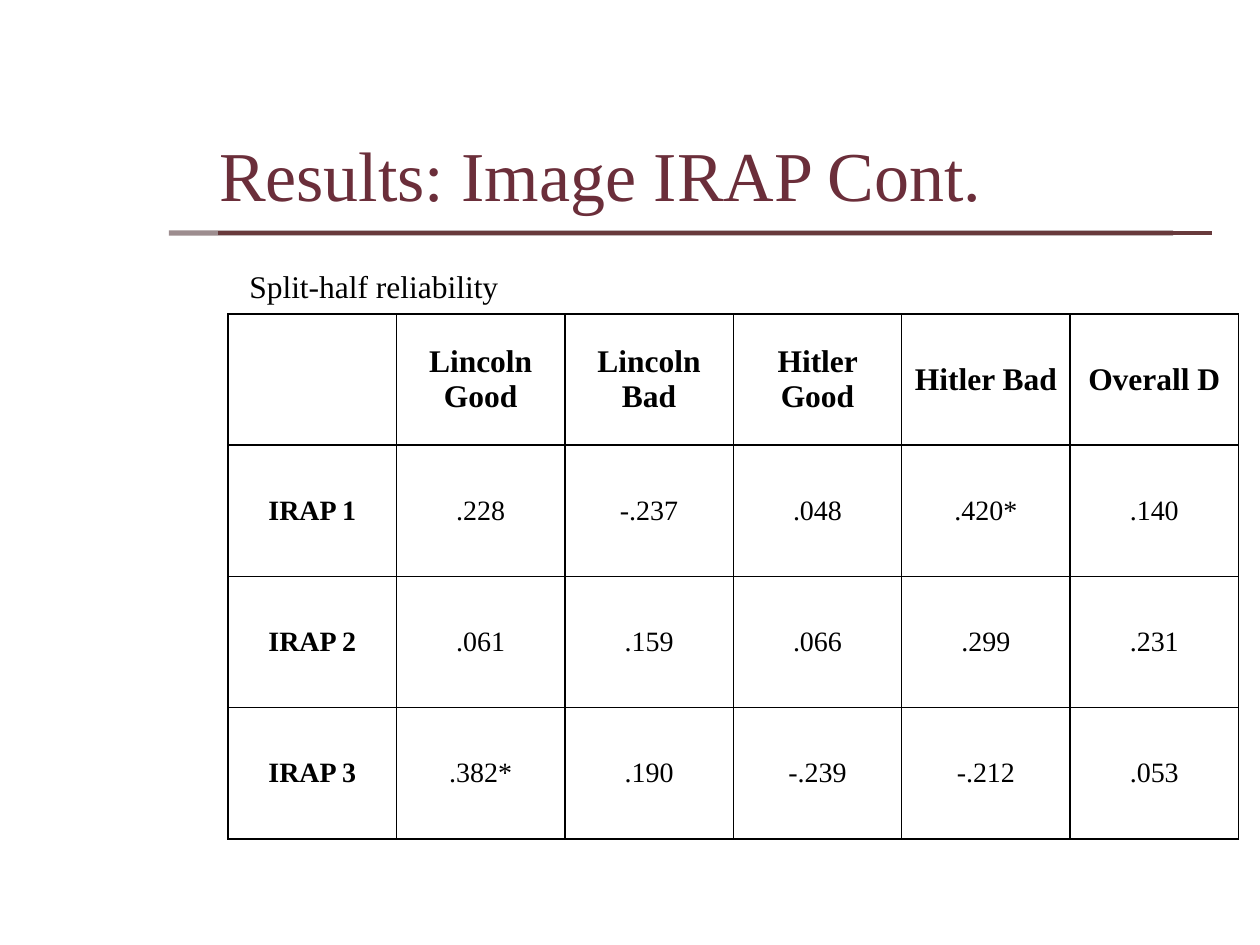
from lxml import etree
from pptx import Presentation, util as u
from pptx.dml.color import RGBColor
from pptx.enum import shapes, text
from pptx.oxml import parse_xml
from pptx.oxml.ns import nsdecls, qn

FONT = "Times New Roman"
BLACK = "000000"
MAROON = "6B2E3A"
RESULTS = [
    ["", "Lincoln Good", "Lincoln Bad", "Hitler Good", "Hitler Bad", "Overall D"],
    ["IRAP 1", ".228", "-.237", ".048", ".420*", ".140"],
    ["IRAP 2", ".061", ".159", ".066", ".299", ".231"],
    ["IRAP 3", ".382*", ".190", "-.239", "-.212", ".053"],
]


def color(value):
    return RGBColor.from_string(value)


def write(frame, wording, size=18, ink=BLACK, bold=False, align=text.PP_ALIGN.LEFT, spacing=None):
    paragraph = frame.paragraphs[0]
    paragraph.alignment = align
    paragraph.line_spacing = spacing
    run = paragraph.add_run()
    run.text = wording
    run.font.name = FONT
    run.font.size = u.Pt(size)
    run.font.bold = bold
    run.font.color.rgb = color(ink)


class SlideBuilder:
    def __init__(self, deck):
        self.slide = deck.slides.add_slide(deck.slide_layouts[6])

    def rule(self, left, right, y, ink, width, opacity=100):
        rule = self.slide.shapes.add_connector(
            shapes.MSO_CONNECTOR.STRAIGHT,
            u.Inches(left), u.Inches(y), u.Inches(right), u.Inches(y))
        rule.line.color.rgb = color(ink)
        rule.line.width = u.Pt(width)
        properties = rule._element.spPr
        etree.SubElement(properties, qn("a:effectLst"))
        if opacity < 100:
            tint = properties.find(".//" + qn("a:srgbClr"))
            etree.SubElement(tint, qn("a:alpha"), val=str(opacity * 1000))

    def textbox(self, left, top, width, height, wording, anchor, bottom=0.05, **style):
        box = self.slide.shapes.add_textbox(
            u.Inches(left), u.Inches(top), u.Inches(width), u.Inches(height))
        frame = box.text_frame
        frame.word_wrap = True
        frame.vertical_anchor = anchor
        frame.margin_bottom = u.Inches(bottom)
        write(frame, wording, spacing=0.9, **style)

    def border(self, cell):
        properties = cell._tc.get_or_add_tcPr()
        for position, side in enumerate(("lnL", "lnR", "lnT", "lnB")):
            properties.insert(position, parse_xml(
                f'<a:{side} {nsdecls("a")} w="{u.Pt(1)}"><a:solidFill>'
                f'<a:srgbClr val="{BLACK}"/></a:solidFill></a:{side}>'))

    def table(self, left, top, width, height, rows):
        grid = self.slide.shapes.add_table(
            len(rows), len(rows[0]), u.Inches(left), u.Inches(top),
            u.Inches(width), u.Inches(height)).table
        for r, row in enumerate(rows):
            for c, wording in enumerate(row):
                cell = grid.cell(r, c)
                cell.fill.background()
                cell.vertical_anchor = text.MSO_ANCHOR.MIDDLE
                self.border(cell)
                if wording:
                    write(cell.text_frame, wording, size=18 if r == 0 else 16,
                          bold=r == 0 or c == 0, align=text.PP_ALIGN.CENTER)


def main():
    deck = Presentation()
    deck.slide_width, deck.slide_height = u.Inches(10), u.Inches(7.5)
    builder = SlideBuilder(deck)
    builder.rule(1.34, 9.31, 1.85, "3C1C21", 3, opacity=50)
    builder.rule(1.73, 9.62, 1.85, "683A3C", 2.5)
    builder.textbox(1.88, 2.1, 7.19, 5.12, "Split-half reliability", text.MSO_ANCHOR.TOP)
    builder.table(1.81, 2.49, 8.02, 4.17, RESULTS)
    builder.textbox(1.64, 0.4, 7.67, 1.45, "Results: Image IRAP Cont.",
                    text.MSO_ANCHOR.BOTTOM, bottom=0.13, size=40, ink=MAROON)
    deck.save("out.pptx")


if __name__ == "__main__":
    main()
